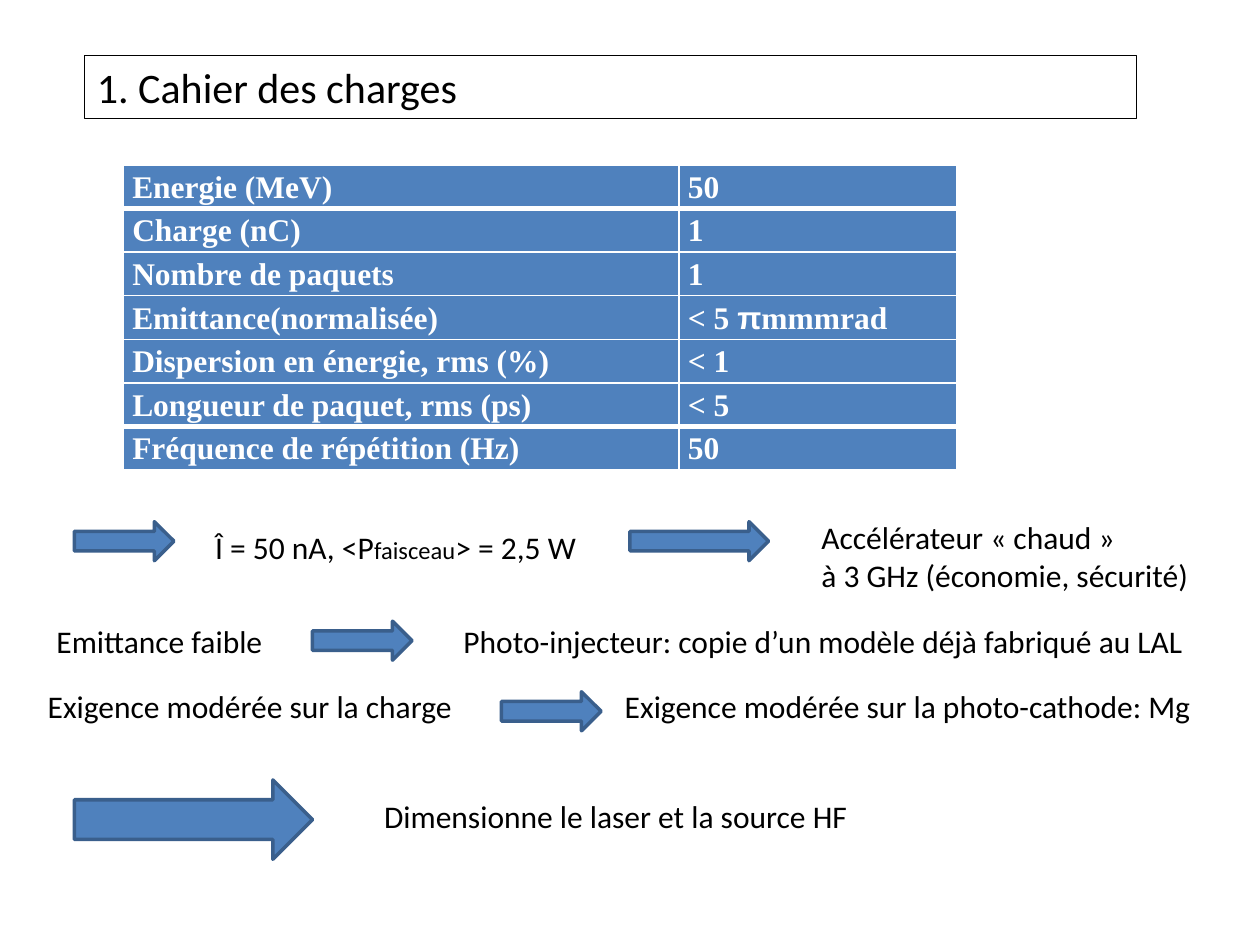
"""Build the accelerator specification slide: parameter table and its consequences."""
from lxml import etree
from pptx import Presentation
from pptx.dml.color import RGBColor
from pptx.enum.shapes import MSO_SHAPE
from pptx.enum.text import MSO_ANCHOR, PP_ALIGN
from pptx.oxml.ns import qn
from pptx.util import Inches, Pt

RECTANGLE = MSO_SHAPE.RECTANGLE
RIGHT_ARROW = MSO_SHAPE.RIGHT_ARROW
MIDDLE = MSO_ANCHOR.MIDDLE
LEFT = PP_ALIGN.LEFT
JUSTIFY = PP_ALIGN.JUSTIFY
BLUE, DARK_BLUE, WHITE, BLACK = "4F81BD", "3A5F8C", "FFFFFF", "000000"


def color(value):
    return RGBColor.from_string(value)


def write(paragraph, runs, size, font_name, text_color):
    paragraph.font.size = Pt(size)
    paragraph.font.name = font_name
    paragraph.font.color.rgb = color(text_color)
    for text, run_size, run_font in runs:
        run = paragraph.add_run()
        run.text = text
        if run_size:
            run.font.size = Pt(run_size)
        if run_font:
            run.font.name = run_font


presentation = Presentation()
presentation.slide_width = Inches(10)
presentation.slide_height = Inches(7.5)
slide = presentation.slides.add_slide(presentation.slide_layouts[6])

title = slide.shapes.add_shape(RECTANGLE, Inches(0.67), Inches(0.44), Inches(8.35), Inches(0.5))
title.shadow.inherit = False
title.fill.background()
title.line.color.rgb = color(BLACK)
title.line.width = Pt(0.25)
title.text_frame.vertical_anchor = MIDDLE
title_paragraph = title.text_frame.paragraphs[0]
title_paragraph.alignment = LEFT
write(title_paragraph, [("1. Cahier des charges", None, None)], 24, "Calibri", BLACK)

parameters = [
    ("Energie (MeV)", "50"),
    ("Charge (nC)", "1"),
    ("Nombre de paquets", "1"),
    ("Emittance(normalisée)", "< 5 πmmmrad"),
    ("Dispersion en énergie, rms (%)", "< 1"),
    ("Longueur de paquet, rms (ps)", "< 5"),
    ("Fréquence de répétition (Hz)", "50"),
]
last_row = len(parameters) - 1
table = slide.shapes.add_table(
    len(parameters), 2, Inches(0.98), Inches(1.31), Inches(6.61), Inches(2.42)
).table
table.columns[0].width = Inches(4.41)
table.columns[1].width = Inches(2.2)
for row_index, row_texts in enumerate(parameters):
    top_width = 3 if row_index in (1, last_row) else 1
    bottom_width = 3 if row_index in (0, last_row - 1) else 1
    borders = {"a:lnL": 1, "a:lnR": 1, "a:lnT": top_width, "a:lnB": bottom_width}
    for column_index, text in enumerate(row_texts):
        cell = table.cell(row_index, column_index)
        cell.margin_left = cell.margin_right = Inches(0.07)
        cell.margin_top = cell.margin_bottom = 0
        cell.fill.solid()
        cell.fill.fore_color.rgb = color(BLUE)
        paragraph = cell.text_frame.paragraphs[0]
        paragraph.alignment = JUSTIFY
        paragraph.line_spacing = 1.15
        paragraph.font.bold = True
        before, symbol, after = text.partition("π")
        pieces = [(before, None, None), (symbol, None, "Arial"), (after, None, None)]
        runs = [piece for piece in pieces if piece[0]]
        write(paragraph, runs, 18, "Times New Roman", WHITE)
        properties = cell._tc.get_or_add_tcPr()
        for position, (tag, width) in enumerate(borders.items()):
            border = etree.Element(qn(tag), w=str(Pt(width)))
            fill = etree.SubElement(border, qn("a:solidFill"))
            etree.SubElement(fill, qn("a:srgbClr"), val=WHITE)
            properties.insert(position, border)

arrows = [
    (0.59, 4.14, 0.79, 0.31),
    (5, 4.14, 1.1, 0.31),
    (2.48, 4.93, 0.79, 0.31),
    (3.98, 5.49, 0.79, 0.31),
    (0.59, 6.19, 1.89, 0.63),
]
for bounds in arrows:
    arrow = slide.shapes.add_shape(RIGHT_ARROW, *map(Inches, bounds))
    arrow.shadow.inherit = False
    arrow.fill.solid()
    arrow.fill.fore_color.rgb = color(BLUE)
    arrow.line.color.rgb = color(DARK_BLUE)
    arrow.line.width = Pt(2)

beam_runs = [("Î = 50 nA, <P", None, None), ("faisceau", 14, None), ("> = 2,5 W", None, None)]
labels = [
    (1.61, 4.14, 3.1, 0.4, [beam_runs]),
    (6.42, 4.06, 3.15, 0.71, ["Accélérateur « chaud »", "à 3 GHz (économie, sécurité)"]),
    (0.35, 4.89, 1.86, 0.4, ["Emittance faible"]),
    (3.58, 4.89, 5.99, 0.4, ["Photo-injecteur: copie d’un modèle déjà fabriqué au LAL"]),
    (0.28, 5.4, 3.45, 0.4, ["Exigence modérée sur la charge"]),
    (4.86, 5.4, 4.75, 0.4, ["Exigence modérée sur la photo-cathode: Mg"]),
    (2.95, 6.28, 3.92, 0.4, ["Dimensionne le laser et la source HF"]),
]
for *bounds, lines in labels:
    text_frame = slide.shapes.add_textbox(*map(Inches, bounds)).text_frame
    text_frame.word_wrap = False
    for index, line in enumerate(lines):
        paragraph = text_frame.add_paragraph() if index else text_frame.paragraphs[0]
        runs = [(line, None, None)] if isinstance(line, str) else line
        write(paragraph, runs, 18, "Calibri", BLACK)

presentation.save("out.pptx")
